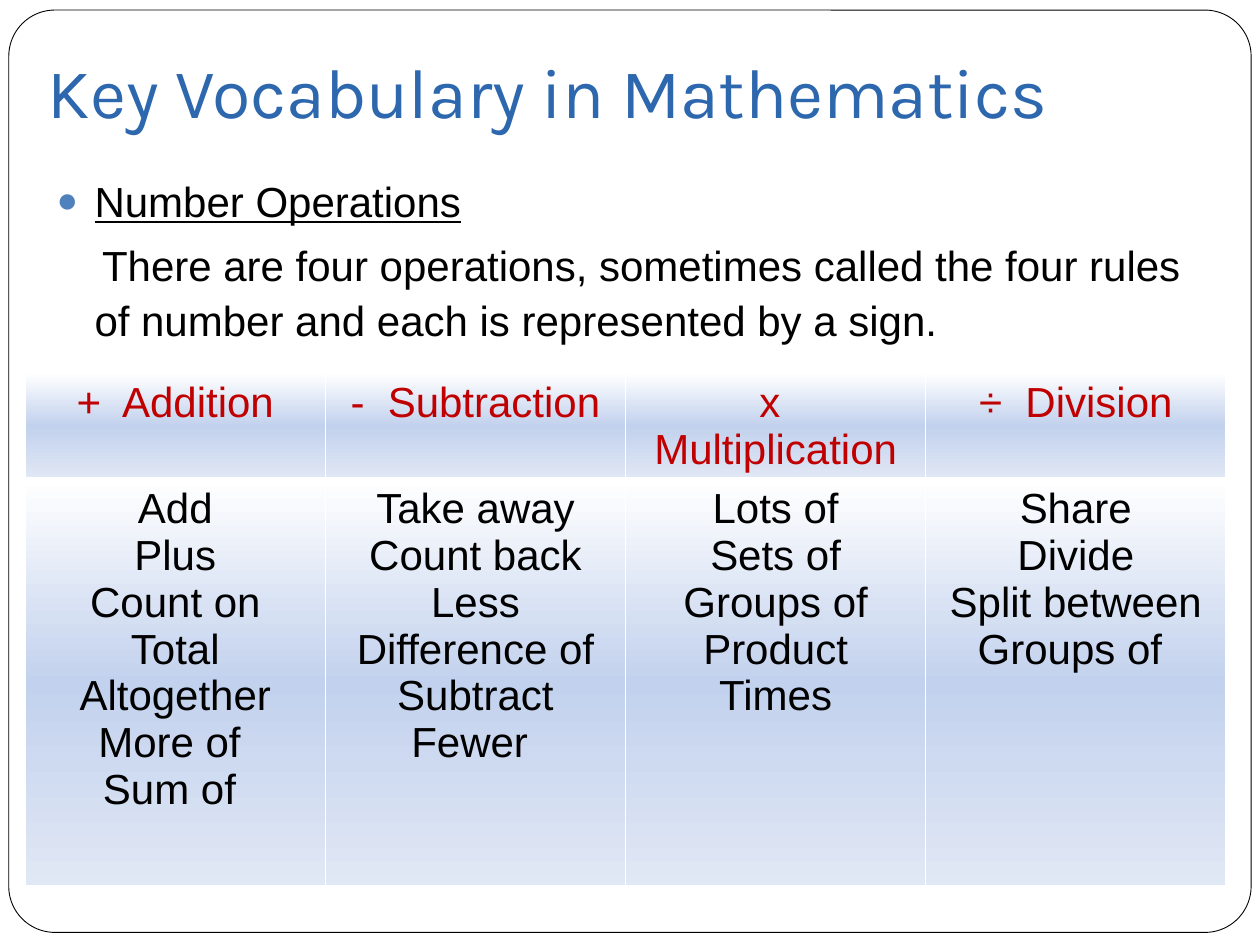
from lxml import etree
from pptx import Presentation
from pptx.dml.color import RGBColor
from pptx.enum.shapes import MSO_SHAPE
from pptx.enum.text import MSO_ANCHOR, MSO_AUTO_SIZE, PP_ALIGN
from pptx.oxml import parse_xml
from pptx.oxml.ns import nsdecls, qn
from pptx.util import Inches, Pt

ROUNDED = MSO_SHAPE.ROUNDED_RECTANGLE
BOTTOM, TOP = MSO_ANCHOR.BOTTOM, MSO_ANCHOR.TOP
NO_FIT = MSO_AUTO_SIZE.NONE
LEFT, CENTER = PP_ALIGN.LEFT, PP_ALIGN.CENTER

COLORS = {"white": "FFFFFF", "black": "000000", "title": "2D67AD",
          "bullet": "4F81BD", "header": "C00000",
          "middle": "C2D1ED", "pale": "E1E8F5"}
GRADIENT = {0: "white", 50: "middle", 100: "pale"}
TITLE = {"name": "Karla", "size": Pt(40)}
TEXT = {"name": "Arial", "size": Pt(24)}

OPERATIONS = {
    "+  Addition": ["Add", "Plus", "Count on", "Total", "Altogether",
                    "More of ", "Sum of "],
    "-  Subtraction": ["Take away", "Count back", "Less", "Difference of",
                       "Subtract", "Fewer "],
    "x  Multiplication": ["Lots of", "Sets of", "Groups of", "Product", "Times"],
    "÷  Division": ["Share", "Divide", "Split between", "Groups of "],
}


def rgb(name):
    return RGBColor.from_string(COLORS[name])


def box(left, top, width, height):
    return [Inches(v) for v in (left, top, width, height)]


def place(sp, area):
    sp.left, sp.top, sp.width, sp.height = area


def format_font(font, color, values):
    for key, value in values.items():
        setattr(font, key, value)
    font.color.rgb = rgb(color)


def add_lines(tf, lines, align, color, values):
    for i, line in enumerate(lines):
        p = tf.add_paragraph() if i else tf.paragraphs[0]
        p.alignment = align
        r = p.add_run()
        r.text = line
        format_font(r.font, color, values)


def add_frame(s, area):
    sp = s.shapes.add_shape(ROUNDED, *area)
    sp.adjustments[0] = 0.05
    sp.shadow.inherit = False
    sp.fill.solid()
    sp.fill.fore_color.rgb = rgb("white")
    sp.line.color.rgb = rgb("black")
    sp.line.width = Pt(0.5)
    s.shapes._spTree.insert(2, sp._element)


def add_title(s, area, text):
    sp = s.shapes.title
    place(sp, area)
    tf = sp.text_frame
    values = {"auto_size": NO_FIT, "vertical_anchor": BOTTOM,
              "margin_bottom": Inches(0.1), "word_wrap": True}
    for key, value in values.items():
        setattr(tf, key, value)
    add_lines(tf, [text], LEFT, "title", TITLE)


def set_bullet(p, indent, bulleted):
    pPr = p._p.get_or_add_pPr()
    pPr.set("marL", str(Inches(0.3)))
    pPr.set("indent", str(Inches(indent)))
    if not bulleted:
        etree.SubElement(pPr, qn("a:buNone"))
        return
    color = etree.SubElement(pPr, qn("a:buClr"))
    etree.SubElement(color, qn("a:srgbClr"), val=COLORS["bullet"])
    etree.SubElement(pPr, qn("a:buSzPct"), val="85000")
    etree.SubElement(pPr, qn("a:buFont"), typeface="Arial")
    etree.SubElement(pPr, qn("a:buChar"), char="●")


def add_body(s, area, heading, text):
    sp = s.placeholders[1]
    place(sp, area)
    tf = sp.text_frame
    tf.auto_size = NO_FIT
    tf.vertical_anchor = TOP
    add_lines(tf, [heading, text], LEFT, "black", TEXT)
    for p in tf.paragraphs:
        p.space_before = Pt(5.8)
        p.line_spacing = 1.08
    first, second = tf.paragraphs
    first.runs[0].font.underline = True
    set_bullet(first, -0.3, True)
    set_bullet(second, 0.06, False)


def style_cell(cell, bottom):
    tcPr = cell._tc.get_or_add_tcPr()
    for side, width in {"L": 1, "R": 1, "T": 1, "B": bottom}.items():
        tcPr.append(parse_xml(
            f'<a:ln{side} {nsdecls("a")} w="{Pt(width)}"><a:solidFill>'
            f'<a:srgbClr val="{COLORS["white"]}"/></a:solidFill></a:ln{side}>'))
    stops = "".join(
        f'<a:gs pos="{pos * 1000}"><a:srgbClr val="{COLORS[name]}"/></a:gs>'
        for pos, name in GRADIENT.items())
    tcPr.append(parse_xml(
        f'<a:gradFill {nsdecls("a")} rotWithShape="1"><a:gsLst>{stops}</a:gsLst>'
        '<a:lin ang="5400000" scaled="0"/></a:gradFill>'))


def add_operations(s, area, operations):
    table = s.shapes.add_table(2, len(operations), *area).table
    table.rows[0].height = Inches(0.63)
    table.rows[1].height = area[3] - Inches(0.63)
    for col, (name, words) in enumerate(operations.items()):
        rows = (([name], "header", 3), (words, "black", 1))
        for row, (lines, color, bottom) in enumerate(rows):
            cell = table.cell(row, col)
            add_lines(cell.text_frame, lines, CENTER, color,
                      {**TEXT, "bold": False})
            style_cell(cell, bottom)


def main():
    prs = Presentation()
    prs.slide_width, prs.slide_height = Inches(10), Inches(7.5)
    s = prs.slides.add_slide(prs.slide_layouts[1])
    add_frame(s, box(0.07, 0.08, 9.86, 7.32))
    add_title(s, box(0.28, 0.3, 9.22, 0.85), "Key Vocabulary in Mathematics")
    add_body(s, box(0.35, 1.31, 9.15, 5.27), "Number Operations",
             "There are four operations, sometimes called the four rules "
             "of number and each is represented by a sign.")
    add_operations(s, box(0.2, 2.96, 9.53, 3.86), OPERATIONS)
    prs.save("out.pptx")


if __name__ == "__main__":
    main()
